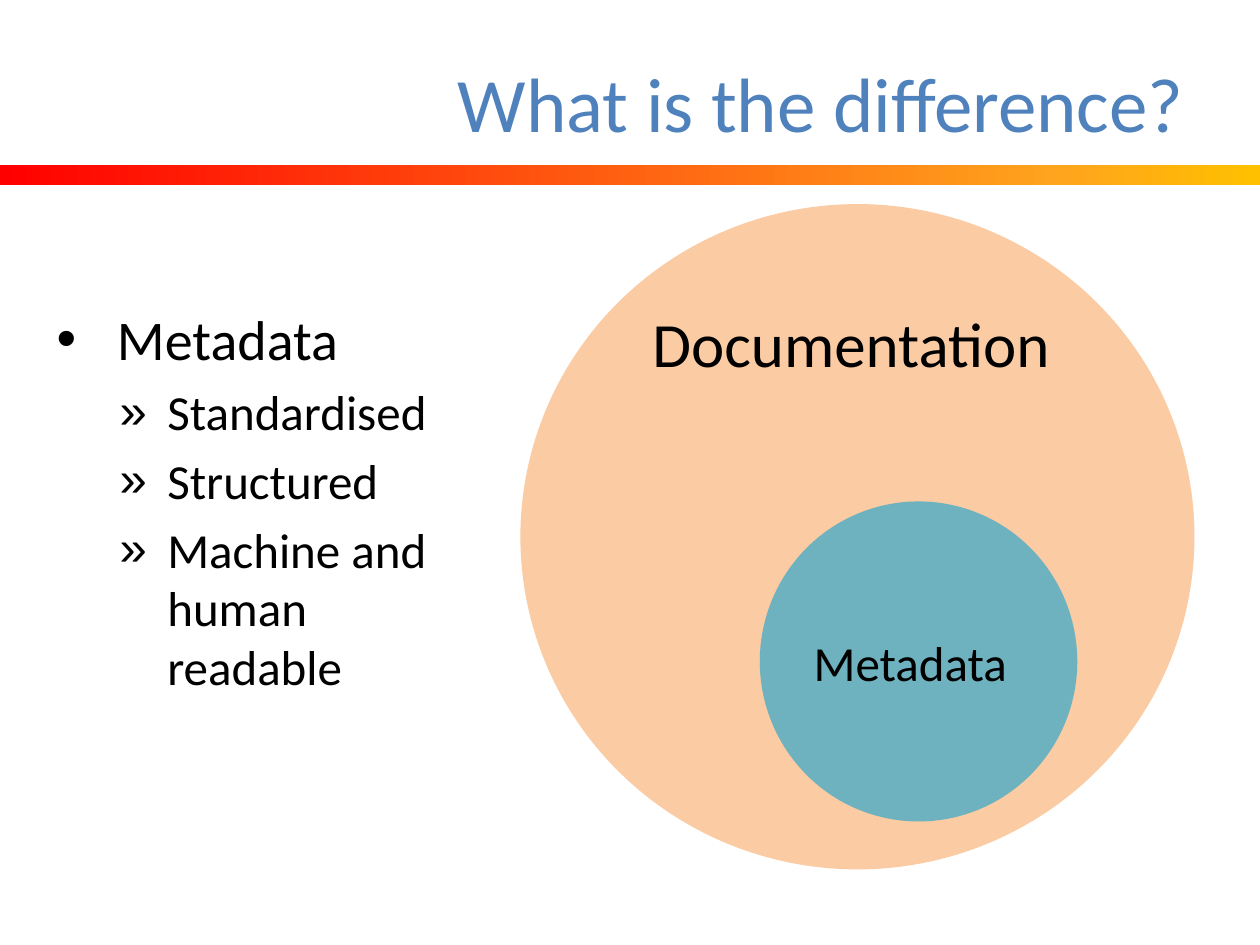
"""Build the slide that contrasts documentation with metadata."""
import copy
from dataclasses import dataclass

import pptx
import pptx.dml.color
import pptx.enum.shapes
import pptx.enum.text
import pptx.oxml.ns
import pptx.oxml.xmlchemy
import pptx.util

Inches = pptx.util.Inches
Pt = pptx.util.Pt
qn = pptx.oxml.ns.qn
new_element = pptx.oxml.xmlchemy.OxmlElement
SHAPES = pptx.enum.shapes.MSO_SHAPE
ALIGN = pptx.enum.text.PP_ALIGN
ANCHOR = pptx.enum.text.MSO_ANCHOR


@dataclass(frozen=True)
class Frame:
    left: float
    top: float
    width: float
    height: float

    def lengths(self) -> tuple:
        return tuple(Inches(n) for n in (self.left, self.top, self.width, self.height))


@dataclass(frozen=True)
class Circle:
    frame: Frame
    color: str
    opacity: int


@dataclass(frozen=True)
class Label:
    frame: Frame
    text: str
    size: int
    color: str = "000000"
    align: ALIGN = ALIGN.LEFT
    anchor: ANCHOR = ANCHOR.TOP


@dataclass(frozen=True)
class Level:
    number: int
    mark: str
    size: int
    indent: float
    hanging: float
    space: float


TOPIC = Level(0, "•", 32, 0.48, 0.48, 0)
DETAIL = Level(1, "»", 28, 0.88, 0.38, 5.6)

STOPS = ((0, "FF0000"), (0.84, "FFA41D"), (1, "FFC000"))
CIRCLES = (
    Circle(Frame(4.13, 1.62, 5.35, 5.28), "F79646", 49),
    Circle(Frame(6.03, 3.98, 2.52, 2.54), "4BACC6", 80),
)
TITLE = Label(Frame(0.5, 0.3, 9, 1.01), "What is the difference?", 44, "4F81BD",
              ALIGN.RIGHT, ANCHOR.MIDDLE)
CIRCLE_LABELS = (
    Label(Frame(6.36, 4.97, 1.85, 0.57), "Metadata", 28),
    Label(Frame(5.08, 2.37, 3.46, 0.71), "Documentation", 36),
)
POINTS = (
    (TOPIC, "Metadata"),
    (DETAIL, "Standardised"),
    (DETAIL, "Structured"),
    (DETAIL, "Machine and human readable"),
)


def rgb(color: str) -> pptx.dml.color.RGBColor:
    return pptx.dml.color.RGBColor.from_string(color)


def add_plain_shape(page, kind: SHAPES, frame: Frame):
    shape = page.shapes.add_shape(kind, *frame.lengths())
    shape.shadow.inherit = False
    shape.line.fill.background()
    return shape


def add_band(page, frame: Frame) -> None:
    shape = add_plain_shape(page, SHAPES.RECTANGLE, frame)
    shape.fill.gradient()
    shape.fill.gradient_angle = 0
    last = shape._element.spPr.find(qn("a:gradFill")).find(qn("a:gsLst"))[-1]
    last.addprevious(copy.deepcopy(last))
    for stop, (position, color) in zip(shape.fill.gradient_stops, STOPS):
        stop.position = position
        stop.color.rgb = rgb(color)


def add_circle(page, circle: Circle) -> None:
    shape = add_plain_shape(page, SHAPES.OVAL, circle.frame)
    shape.fill.solid()
    shape.fill.fore_color.rgb = rgb(circle.color)
    color = shape._element.spPr.find(qn("a:solidFill"))[0]
    alpha = new_element("a:alpha")
    alpha.set("val", str(circle.opacity * 1000))
    color.append(alpha)


def add_span(para, text: str, size: int, color: str) -> None:
    span = para.add_run()
    span.text = text
    span.font.name = "Calibri"
    span.font.size = Pt(size)
    span.font.color.rgb = rgb(color)


def add_box(page, frame: Frame):
    box = page.shapes.add_textbox(*frame.lengths())
    box.text_frame.word_wrap = True
    return box.text_frame


def add_label(page, label: Label) -> None:
    text = add_box(page, label.frame)
    text.vertical_anchor = label.anchor
    para = text.paragraphs[0]
    para.alignment = label.align
    add_span(para, label.text, label.size, label.color)


def set_level(para, level: Level) -> None:
    para.level = level.number
    properties = para._p.get_or_add_pPr()
    properties.set("marL", str(Inches(level.indent)))
    properties.set("indent", str(-Inches(level.hanging)))
    font = new_element("a:buFont")
    font.set("typeface", "Arial")
    mark = new_element("a:buChar")
    mark.set("char", level.mark)
    properties.extend((font, mark))
    para.space_before = Pt(level.space)


def add_points(page, frame: Frame) -> None:
    text = add_box(page, frame)
    for index, (level, wording) in enumerate(POINTS):
        para = text.add_paragraph() if index else text.paragraphs[0]
        set_level(para, level)
        add_span(para, wording, level.size, "000000")


def main() -> None:
    deck = pptx.Presentation()
    deck.slide_width, deck.slide_height = Inches(10), Inches(7.5)
    page = deck.slides.add_slide(deck.slide_layouts[6])
    add_band(page, Frame(0, 1.31, 10, 0.16))
    add_label(page, TITLE)
    add_points(page, Frame(0.35, 2.37, 3.31, 3.94))
    for circle in CIRCLES:
        add_circle(page, circle)
    for label in CIRCLE_LABELS:
        add_label(page, label)
    deck.save("out.pptx")


if __name__ == "__main__":
    main()
